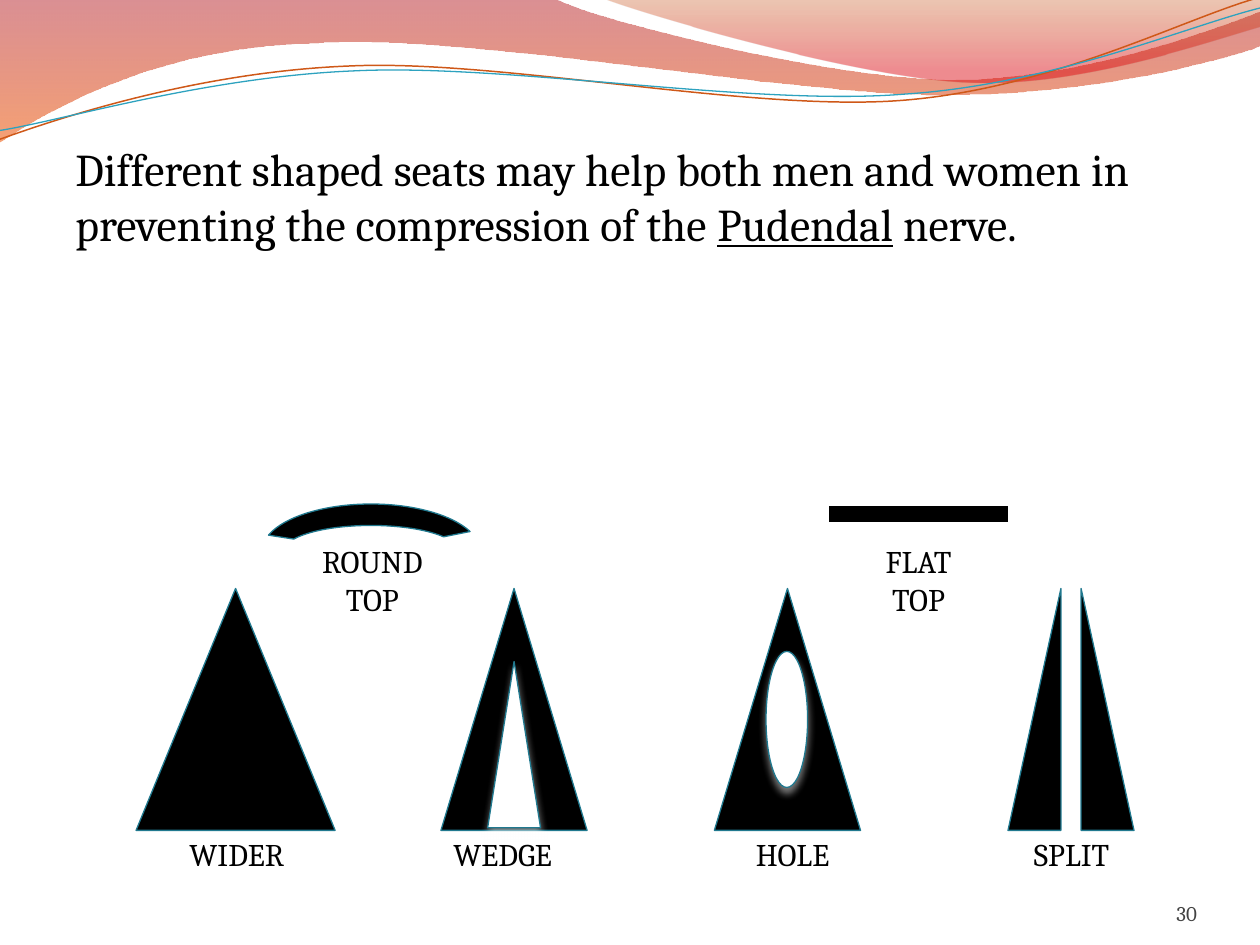
from dataclasses import dataclass

from lxml import etree
from pptx import Presentation
from pptx.dml.color import RGBColor
from pptx.enum import shapes as shp, text as txt
from pptx.oxml.ns import qn
from pptx.util import Inches, Pt

COLORS = {
    "ink": "000000", "paper": "FFFFFF", "outline": "20798F", "number": "434343",
    "crimson": "AF0911", "orange": "EE5300", "rust": "C24400", "red": "DC000B",
    "orange_line": "CF5818", "blue_line": "2DA2BF",
}
FONT = "Cambria"
SHAPE = shp.MSO_SHAPE
ALIGN = txt.PP_ALIGN

Point = tuple[float, float]


@dataclass
class Stop:
    position: float
    color: str
    alpha: int


@dataclass
class Wave:
    start: Point
    segments: list[tuple[Point, ...]]  # one point: straight; three: Bezier
    stops: tuple[Stop, ...] = ()
    line: str = ""
    weight: float = 0
    rotation: float = 0


@dataclass
class Seat:
    kind: shp.MSO_SHAPE
    left: float
    top: float
    width: float
    height: float
    fill: str = "ink"
    rotation: float = 0
    adjustments: tuple[float, ...] = ()
    glow: bool = False


@dataclass
class Label:
    lines: tuple[str, ...]
    left: float
    top: float
    width: float
    height: float
    align: txt.PP_ALIGN = ALIGN.CENTER


WAVES = [
    Wave((0, 0), [
        ((4.4, -0.01),),
        ((4.76, 0.17), (6.64, 0.63), (7.58, 0.63)),
        ((8.53, 0.63), (9.58, 0.26), (10, 0.09)),
        ((10.01, 0.36),),
        ((9.83, 0.44), (8.7, 0.76), (7.46, 0.75)),
        ((6.22, 0.75), (3.82, 0.28), (2.57, 0.34)),
        ((1.29, 0.36), (0.46, 0.83), (-0.01, 1.13)),
        ((0, 0),),
    ], stops=(Stop(0, "crimson", 45), Stop(1, "orange", 55))),
    Wave((4.79, -0.01), [
        ((5.09, 0.11), (6.82, 0.62), (7.69, 0.65)),
        ((8.56, 0.69), (9.61, 0.32), (10, 0.21)),
        ((10, 0),),
        ((4.79, -0.01),),
    ], stops=(Stop(0, "rust", 30), Stop(0.8, "red", 45))),
    Wave((-0.02, 0.87), [
        ((0.47, 0.72), (1.58, 0.41), (2.78, 0.42)),
        ((3.96, 0.42), (5.91, 0.93), (7.12, 0.9)),
        ((8.32, 0.87), (9.4, 0.36), (10, 0.22)),
    ], line="orange_line", weight=0.85, rotation=357.3),
    Wave((-0.02, 0.8), [
        ((0.46, 0.75), (1.64, 0.45), (2.83, 0.46)),
        ((4.03, 0.46), (5.96, 0.89), (7.16, 0.85)),
        ((8.35, 0.83), (9.42, 0.42), (10.02, 0.3)),
    ], line="blue_line", weight=0.75, rotation=357.3),
]

SEAT_TOP, SEAT_HEIGHT = 4.67, 1.92
SOLID_SEATS = [
    Seat(SHAPE.ISOSCELES_TRIANGLE, 5.67, SEAT_TOP, 1.16, SEAT_HEIGHT),
    Seat(SHAPE.ISOSCELES_TRIANGLE, 3.5, SEAT_TOP, 1.16, SEAT_HEIGHT),
    Seat(SHAPE.ISOSCELES_TRIANGLE, 1.08, SEAT_TOP, 1.58, SEAT_HEIGHT),
]
CUTOUTS_AND_SPLIT = [
    Seat(SHAPE.FLOWCHART_EXTRACT, 3.87, 5.25, 0.42, 1.32, "paper", glow=True),
    Seat(SHAPE.OVAL, 6.08, 5.17, 0.33, 1.08, "paper", glow=True),
    Seat(SHAPE.RIGHT_TRIANGLE, 8.58, SEAT_TOP, 0.42, SEAT_HEIGHT),
    Seat(SHAPE.RIGHT_TRIANGLE, 7.25, 5.42, SEAT_HEIGHT, 0.42, rotation=270),
]
ROUND_TOP = Seat(SHAPE.BLOCK_ARC, 2.08, 4, 1.73, 0.75,
                 adjustments=(113.355, 209.255, 0.227))

SEAT_LABELS = [
    Label(("WIDER",), 1.17, 6.58, 1.42, 0.4),
    Label(("WEDGE",), 3.5, 6.58, 1.17, 0.4, ALIGN.LEFT),
    Label(("HOLE",), 5.58, 6.58, 1.42, 0.4),
    Label(("SPLIT",), 7.67, 6.58, 1.67, 0.4),
]
TOP_LABELS = [
    Label(("FLAT", "TOP"), 6.75, 4.25, 1.08, 0.71),
    Label(("ROUND", "TOP"), 2.33, 4.25, 1.25, 0.71),
]


def rgb(name: str) -> RGBColor:
    return RGBColor.from_string(COLORS[name])


def bend(band, wave: Wave) -> None:
    """Join the three straight steps of each Bezier segment into one curve."""
    steps = iter(list(band.element.spPr.iter(qn("a:lnTo"))))
    for segment in wave.segments:
        group = [next(steps) for _ in segment]
        if len(group) == 3:
            curve = etree.Element(qn("a:cubicBezTo"))
            group[0].addprevious(curve)
            for step in group:
                curve.append(step[0])
                step.getparent().remove(step)


def draw_wave(slide, wave: Wave) -> None:
    builder = slide.shapes.build_freeform(Inches(wave.start[0]), Inches(wave.start[1]))
    builder.add_line_segments([(Inches(x), Inches(y)) for segment in wave.segments
                               for x, y in segment], close=bool(wave.stops))
    band = builder.convert_to_shape()
    bend(band, wave)
    band.rotation = wave.rotation
    band.shadow.inherit = False
    if not wave.stops:
        band.fill.background()
        band.line.color.rgb = rgb(wave.line)
        band.line.width = Pt(wave.weight)
        return
    band.line.fill.background()
    band.fill.gradient()
    band.fill.gradient_angle = 270
    for target, stop in zip(band.fill.gradient_stops, wave.stops):
        target.position = stop.position
        target.color.rgb = rgb(stop.color)
    for color, stop in zip(band.element.spPr.iter(qn("a:srgbClr")), wave.stops):
        etree.SubElement(color, qn("a:alpha"), val=str(stop.alpha * 1000))


def add_glow(shape) -> None:
    effects = shape.element.spPr.find(qn("a:effectLst"))
    shadow = etree.SubElement(effects, qn("a:outerShdw"), blurRad=str(Pt(4.5)),
                              dist=str(Pt(3)), dir="5400000", rotWithShape="0")
    color = etree.SubElement(shadow, qn("a:srgbClr"), val=COLORS["paper"])
    etree.SubElement(color, qn("a:alpha"), val="48000")


def draw_seat(slide, seat: Seat) -> None:
    shape = slide.shapes.add_shape(seat.kind, Inches(seat.left), Inches(seat.top),
                                   Inches(seat.width), Inches(seat.height))
    shape.rotation = seat.rotation
    for index, value in enumerate(seat.adjustments):
        shape.adjustments[index] = value
    shape.fill.solid()
    shape.fill.fore_color.rgb = rgb(seat.fill)
    shape.line.color.rgb = rgb("outline")
    shape.line.width = Pt(0.75)
    shape.shadow.inherit = False
    if seat.glow:
        add_glow(shape)


def draw_label(slide, label: Label, size: float = 18, color: str = "ink"):
    box = slide.shapes.add_textbox(Inches(label.left), Inches(label.top),
                                   Inches(label.width), Inches(label.height))
    frame = box.text_frame
    frame.word_wrap = True
    frame.text = "\n".join(label.lines)
    for paragraph in frame.paragraphs:
        paragraph.alignment = label.align
        paragraph.font.name = FONT
        paragraph.font.size = Pt(size)
        paragraph.font.color.rgb = rgb(color)
    return frame


def main() -> None:
    prs = Presentation()
    prs.slide_width, prs.slide_height = Inches(10), Inches(7.5)
    slide = prs.slides.add_slide(prs.slide_layouts[6])

    # Wavy header
    for wave in WAVES:
        draw_wave(slide, wave)

    # Solid seats, then the statement with the nerve's name underlined
    for seat in SOLID_SEATS:
        draw_seat(slide, seat)
    statement = draw_label(slide, Label(
        ("Different shaped seats may help both men and women in preventing "
         "the compression of the ",), 0.5, 0.33, 9, 6.92, ALIGN.LEFT), size=26)
    statement.margin_top = Inches(0.79)
    sentence = statement.paragraphs[0]
    nerve = sentence.add_run()
    nerve.text = "Pudendal"
    nerve.font.underline = True
    sentence.add_run().text = " nerve."

    # Cut-outs, split seat and seat names
    for seat in CUTOUTS_AND_SPLIT:
        draw_seat(slide, seat)
    for label in SEAT_LABELS:
        draw_label(slide, label)

    # Round and flat seat tops
    draw_seat(slide, ROUND_TOP)
    flat_top = slide.shapes.add_connector(shp.MSO_CONNECTOR.STRAIGHT, Inches(6.58),
                                          Inches(4.08), Inches(8), Inches(4.08))
    flat_top.line.color.rgb = rgb("ink")
    flat_top.line.width = Pt(9)
    etree.SubElement(flat_top.element.spPr, qn("a:effectLst"))
    for label in TOP_LABELS:
        draw_label(slide, label)

    # Page number
    number = draw_label(slide, Label(("30",), 8.67, 6.95, 0.83, 0.4, ALIGN.RIGHT),
                        size=12, color="number")
    number.margin_left = number.margin_right = number.margin_top = number.margin_bottom = 0
    number.vertical_anchor = txt.MSO_ANCHOR.BOTTOM

    prs.save("out.pptx")


if __name__ == "__main__":
    main()
